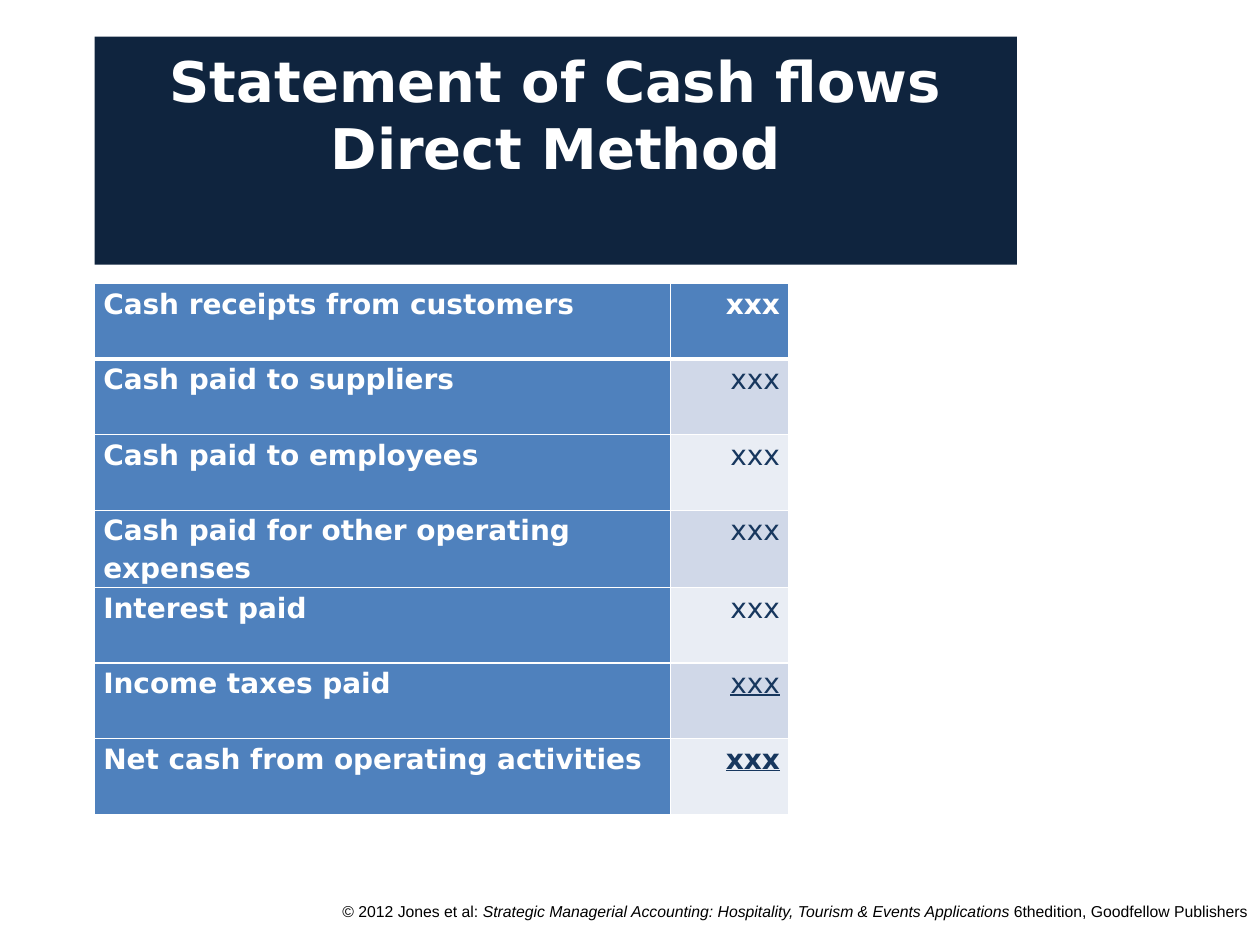
"""Build the direct-method cash flow slide."""
import pptx
import pptx.dml.color
import pptx.enum.shapes
import pptx.enum.text
import pptx.oxml
import pptx.oxml.ns
import pptx.util

Inch, Pt = pptx.util.Inches, pptx.util.Pt
Align = pptx.enum.text.PP_ALIGN


def tint(hue):
    return pptx.dml.color.RGBColor.from_string(hue)


def write(para, text, hue, form):
    run = para.add_run()
    run.text = text
    run.font.color.rgb = tint(hue)
    for key, val in form.items():
        setattr(run.font, key, val)


deck = pptx.Presentation()
deck.slide_width, deck.slide_height = Inch(10), Inch(7.5)
slide = deck.slides.add_slide(deck.slide_layouts[6])
left = Inch(0.75)

foot = slide.shapes.add_textbox(Inch(2.23), Inch(7.11), Inch(7.77), Inch(0.39))
foot.text_frame.word_wrap = True
line = foot.text_frame.paragraphs[0]
line.alignment = Align.RIGHT
parts = [
    ("© 2012 Jones et al: ", False),
    ("Strategic Managerial Accounting: Hospitality, Tourism & Events Applications ", True),
    ("6thedition, Goodfellow Publishers", False),
]
for text, slant in parts:
    write(line, text, "000000", {"name": "Arial", "size": Pt(9), "italic": slant})

title = slide.shapes.add_shape(
    pptx.enum.shapes.MSO_SHAPE.RECTANGLE, left, Inch(0.29), Inch(7.32), Inch(1.81))
title.shadow.inherit = False
title.fill.solid()
title.fill.fore_color.rgb = tint("0F243E")
title.line.fill.background()
frame = title.text_frame
frame.word_wrap = True
frame.vertical_anchor = pptx.enum.text.MSO_ANCHOR.TOP
frame.margin_top = Inch(0.08)
for i, text in enumerate(["Statement of Cash flows", "Direct Method"]):
    para = frame.add_paragraph() if i else frame.paragraphs[0]
    para.alignment = Align.CENTER
    write(para, text, "FFFFFF", {"name": "DejaVu Sans", "size": Pt(32), "bold": True})

labels = [
    "Cash receipts from customers",
    "Cash paid to suppliers",
    "Cash paid to employees",
    "Cash paid for other operating expenses",
    "Interest paid",
    "Income taxes paid",
    "Net cash from operating activities",
]
count = len(labels)
last = count - 1
grid = slide.shapes.add_table(
    count, 2, left, Inch(2.25), Inch(5.51), Inch(0.6 * count)).table
for col, wide in zip(grid.columns, (4.57, 0.94)):
    col.width = Inch(wide)

inset = {"margin_left": Inch(0.07), "margin_right": Inch(0.07),
         "margin_top": 0, "margin_bottom": 0}
for r, label in enumerate(labels):
    for c, text in enumerate((label, "xxx")):
        cell = grid.cell(r, c)
        for key, val in inset.items():
            setattr(cell, key, val)
        head = r == 0 or c == 0
        cell.fill.solid()
        cell.fill.fore_color.rgb = tint("4F81BD" if head else ("E9EDF4", "D0D8E8")[r % 2])
        para = cell.text_frame.paragraphs[0]
        para.alignment = Align.RIGHT if c else Align.LEFT
        para.line_spacing = 1.15
        write(para, text, "FFFFFF" if head else "17375E", {
            "name": "DejaVu Sans", "size": Pt(16), "bold": head or r == last,
            "underline": c == 1 and r >= last - 1})
        props = cell._tc.get_or_add_tcPr()
        for i, side in enumerate("LRTB"):
            thick = (r, side) in ((0, "B"), (1, "T"))
            props.insert(i, pptx.oxml.parse_xml(
                f'<a:ln{side} {pptx.oxml.ns.nsdecls("a")} w="{Pt(3 if thick else 1)}">'
                '<a:solidFill><a:srgbClr val="FFFFFF"/></a:solidFill>'
                f'</a:ln{side}>'))
for row in grid.rows:
    row.height = Inch(0.6)

deck.save("out.pptx")
